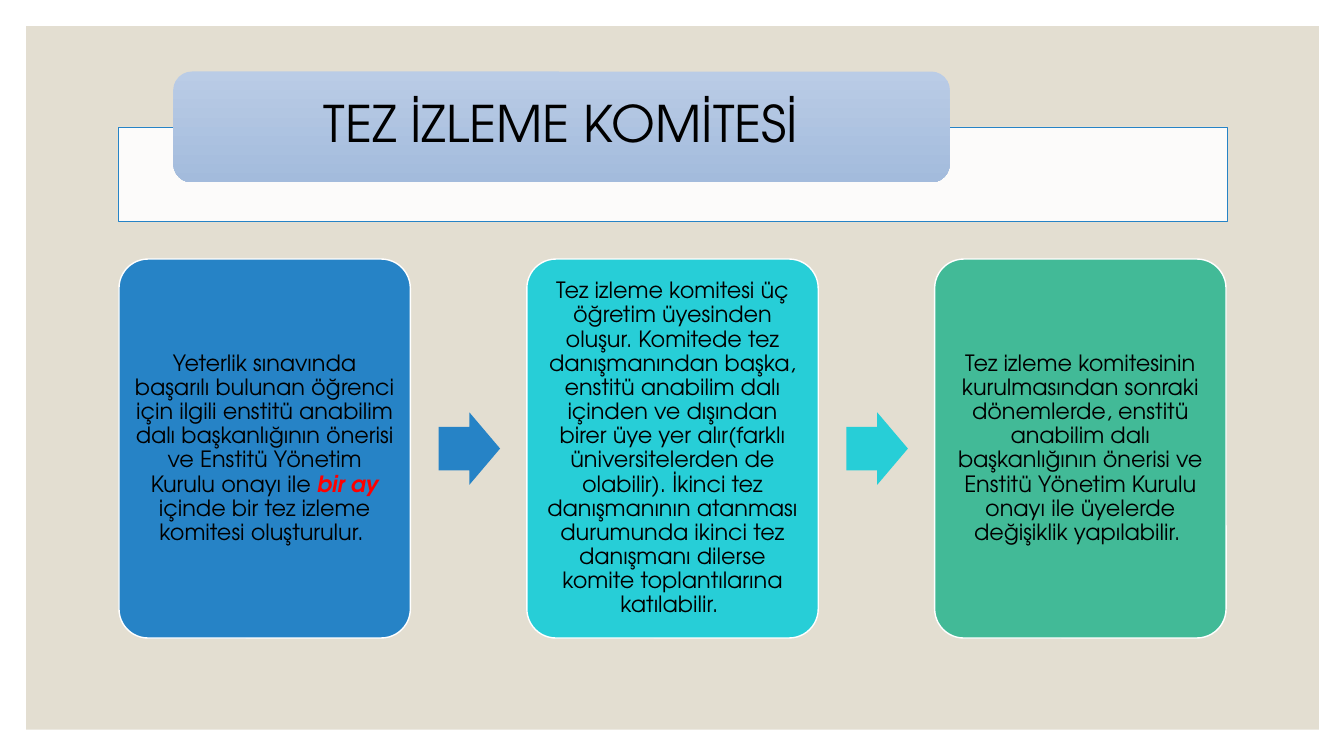
import pptx
import pptx.dml.color
import pptx.enum.shapes
import pptx.enum.text
import pptx.oxml
import pptx.oxml.ns
import pptx.util

Inches = pptx.util.Inches
SHAPE = pptx.enum.shapes.MSO_SHAPE

TITLE = "TEZ İZLEME KOMİTESİ"
# Each step: card colour and runs of (text, is key phrase)
STEPS = [
    ("2683C6", [
        ("Yeterlik sınavında başarılı bulunan öğrenci için ilgili enstitü anabilim "
         "dalı başkanlığının önerisi ve Enstitü Yönetim Kurulu onayı ile ", False),
        ("bir ay ", True),
        ("içinde bir tez izleme komitesi oluşturulur. ", False)]),
    ("27CED7", [
        ("Tez izleme komitesi üç öğretim üyesinden oluşur. Komitede tez danışmanından "
         "başka, enstitü anabilim dalı içinden ve dışından birer üye yer alır(farklı "
         "üniversitelerden de olabilir). İkinci tez danışmanının atanması durumunda "
         "ikinci tez danışmanı dilerse komite toplantılarına katılabilir. ", False)]),
    ("42BA97", [
        ("Tez izleme komitesinin kurulmasından sonraki dönemlerde, enstitü anabilim "
         "dalı başkanlığının önerisi ve Enstitü Yönetim Kurulu onayı ile üyelerde "
         "değişiklik yapılabilir. ", False)]),
]

THEME = {
    "font": "TeX Gyre Adventor", "title_size": 36, "body_size": 16,
    "text": "000000", "key": "FF0000", "white": "FFFFFF",
    "backdrop": "E3DED1", "accent": "2683C6",
    "pill_top": "BACCE6", "pill_bottom": "A3BBDC", "band_alpha": 90,
}

BACKDROP = (0.26, 0.26, 12.82, 6.98)
BAND = (1.17, 1.26, 11, 0.94)
PILL = (1.72, 0.71, 7.7, 1.1)
PILL_TEXT = (1.77, 0.76, 7.59, 0.99)
CARD_LEFT, CARD_TOP, CARD_W, CARD_H, CARD_PITCH = 1.18, 2.57, 2.89, 3.76, 4.045
ARROW_W, ARROW_H, ARROW_GAP = 0.61, 0.72, 0.28


def rgb(name):
    return pptx.dml.color.RGBColor.from_string(THEME.get(name, name))


def add_shape(slide, kind, box, fill=None, line=None, width=0, adjust=()):
    sp = slide.shapes.add_shape(kind, *map(Inches, box))
    sp.shadow.inherit = False
    for i, value in enumerate(adjust):
        sp.adjustments[i] = value
    if fill:
        sp.fill.solid()
        sp.fill.fore_color.rgb = rgb(fill)
    if line:
        sp.line.color.rgb = rgb(line)
        sp.line.width = pptx.util.Pt(width)
    else:
        sp.line.fill.background()
    return sp


def write_text(sp, runs, size, margins):
    """Fill a shape with one centred paragraph of (text, is key phrase) runs."""
    tf = sp.text_frame
    frame = {
        "word_wrap": True,
        "auto_size": pptx.enum.text.MSO_AUTO_SIZE.NONE,
        "vertical_anchor": pptx.enum.text.MSO_ANCHOR.MIDDLE,
    }
    for side, value in zip(("left", "top", "right", "bottom"), margins):
        frame[f"margin_{side}"] = Inches(value)
    for name, value in frame.items():
        setattr(tf, name, value)
    p = tf.paragraphs[0]
    p.alignment = pptx.enum.text.PP_ALIGN.CENTER
    p.line_spacing = 0.9
    for text, is_key in runs:
        r = p.add_run()
        r.text = text
        style = {"name": THEME["font"], "size": pptx.util.Pt(THEME[size]),
                 "bold": is_key, "italic": is_key}
        for name, value in style.items():
            setattr(r.font, name, value)
        r.font.color.rgb = rgb("key" if is_key else "text")


def set_alpha(sp, percent):
    qn = pptx.oxml.ns.qn
    color = sp.fill._xPr.find(qn("a:solidFill")).find(qn("a:srgbClr"))
    alpha = pptx.oxml.parse_xml(
        f'<a:alpha {pptx.oxml.ns.nsdecls("a")} val="{percent * 1000}"/>')
    color.append(alpha)


def add_heading(slide):
    band = add_shape(slide, SHAPE.RECTANGLE, BAND, "white", "accent", 0.5)
    set_alpha(band, THEME["band_alpha"])
    pill = add_shape(slide, SHAPE.ROUNDED_RECTANGLE, PILL)
    pill.fill.gradient()
    pill.fill.gradient_angle = 270
    for stop, name in zip(pill.fill.gradient_stops, ("pill_top", "pill_bottom")):
        stop.color.rgb = rgb(name)
    title = slide.shapes.title
    for name, value in zip(("left", "top", "width", "height"), PILL_TEXT):
        setattr(title, name, Inches(value))
    write_text(title, [(TITLE, False)], "title_size", (0.29, 0, 0.29, 0))
    slide.shapes._spTree.append(title._element)  # bring in front of the pill


def add_steps(slide):
    for i, (color, runs) in enumerate(STEPS):
        left = CARD_LEFT + i * CARD_PITCH
        card = add_shape(slide, SHAPE.ROUNDED_RECTANGLE,
                         (left, CARD_TOP, CARD_W, CARD_H), color, "white", 1, (0.1,))
        write_text(card, runs, "body_size", (0.07,) * 4)
        if i < len(STEPS) - 1:
            box = (left + CARD_W + ARROW_GAP, CARD_TOP + (CARD_H - ARROW_H) / 2,
                   ARROW_W, ARROW_H)
            add_shape(slide, SHAPE.RIGHT_ARROW, box, color, adjust=(0.6, 0.5))


def main():
    prs = pptx.Presentation()
    prs.slide_width, prs.slide_height = Inches(13.33), Inches(7.5)
    slide = prs.slides.add_slide(prs.slide_layouts[5])
    add_shape(slide, SHAPE.RECTANGLE, BACKDROP, "backdrop")
    add_heading(slide)
    add_steps(slide)
    prs.save("out.pptx")


if __name__ == "__main__":
    main()
